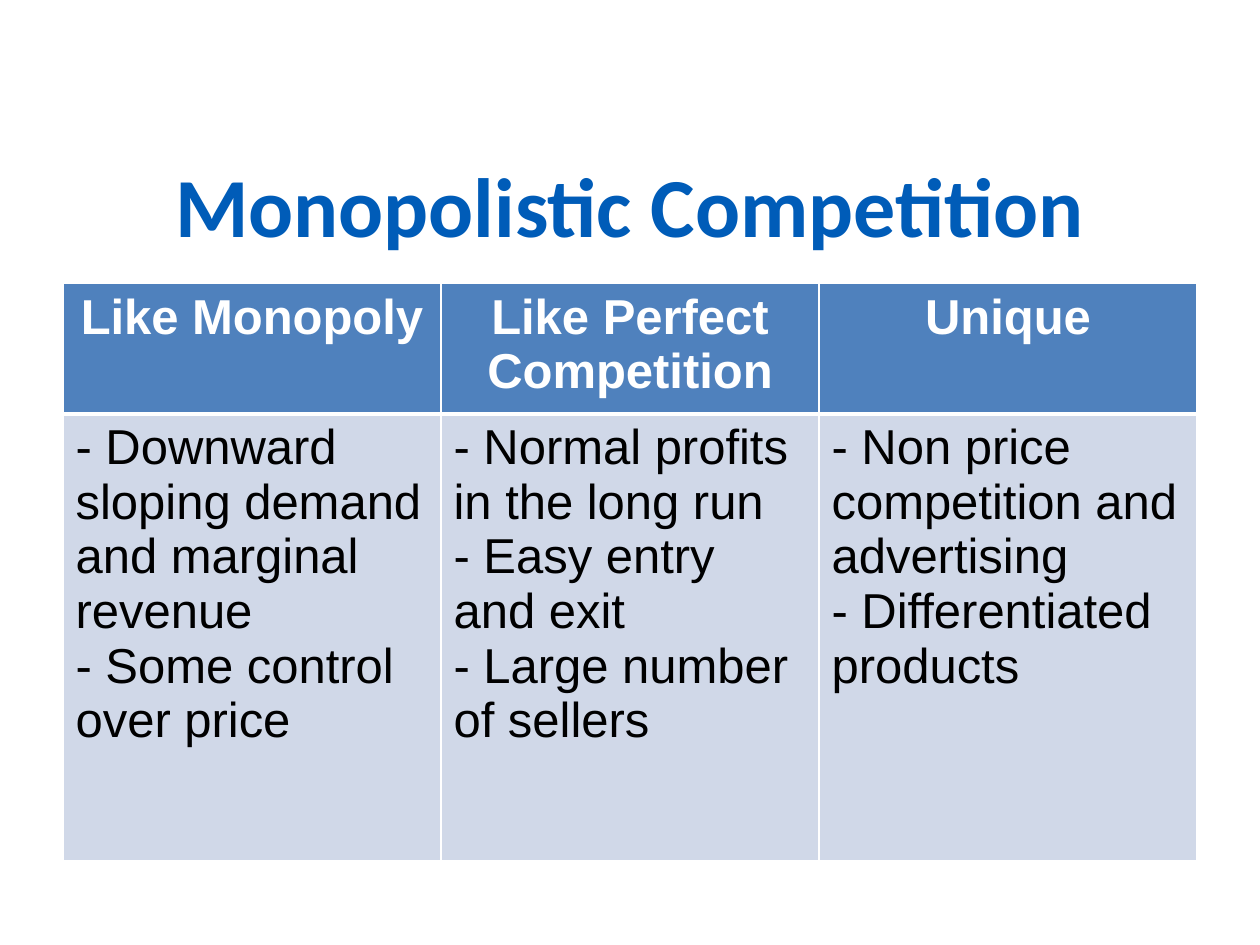
"""Build a slide comparing monopolistic competition with other market forms."""
from dataclasses import dataclass

import lxml.etree
import pptx
import pptx.dml.color
import pptx.enum.text
import pptx.oxml.ns
import pptx.slide
import pptx.table
import pptx.text.text
import pptx.util
from pptx.util import Cm

RGBColor = pptx.dml.color.RGBColor
Alignment = pptx.enum.text.PP_ALIGN
Anchor = pptx.enum.text.MSO_ANCHOR


@dataclass(frozen=True)
class TextStyle:
    font: str
    size: int
    color: str
    bold: bool
    alignment: Alignment


@dataclass(frozen=True)
class Theme:
    title: TextStyle = TextStyle("Calibri", 48, "005CB8", True, Alignment.CENTER)
    header: TextStyle = TextStyle("Arial", 28, "FFFFFF", True, Alignment.CENTER)
    body: TextStyle = TextStyle("Arial", 28, "000000", False, Alignment.LEFT)
    title_leading: int = 57
    header_fill: str = "4F81BD"
    body_fill: str = "D0D8E8"
    border: str = "FFFFFF"
    thin: int = 1
    thick: int = 3


@dataclass(frozen=True)
class Column:
    heading: str
    points: tuple[str, ...]


THEME = Theme()
LEFT, WIDTH = Cm(1.27), Cm(22.86)
TITLE_TOP, TITLE_HEIGHT = Cm(2.54), Cm(3.18)
TABLE_TOP = Cm(5.72)
ROW_HEIGHTS = (Cm(2.43), Cm(9))
COLUMNS = (
    Column("Like Monopoly", (
        "- Downward sloping demand and marginal revenue",
        "- Some control over price",
    )),
    Column("Like Perfect Competition", (
        "- Normal profits in the long run",
        "- Easy entry and exit",
        "- Large number of sellers",
    )),
    Column("Unique", (
        "- Non price competition and advertising",
        "- Differentiated products",
    )),
)


def write_paragraphs(frame: pptx.text.text.TextFrame, lines: tuple[str, ...], style: TextStyle) -> None:
    for index, line in enumerate(lines):
        paragraph = frame.add_paragraph() if index else frame.paragraphs[0]
        paragraph.alignment = style.alignment
        run = paragraph.add_run()
        run.text = line
        run.font.name = style.font
        run.font.size = pptx.util.Pt(style.size)
        run.font.bold = style.bold
        run.font.color.rgb = RGBColor.from_string(style.color)


def set_borders(cell: pptx.table._Cell, top: int, bottom: int) -> None:
    properties = cell._tc.get_or_add_tcPr()
    widths = {"lnL": THEME.thin, "lnR": THEME.thin, "lnT": top, "lnB": bottom}
    for index, (side, width) in enumerate(widths.items()):
        line = lxml.etree.Element(pptx.oxml.ns.qn(f"a:{side}"), w=str(pptx.util.Pt(width)))
        fill = lxml.etree.SubElement(line, pptx.oxml.ns.qn("a:solidFill"))
        lxml.etree.SubElement(fill, pptx.oxml.ns.qn("a:srgbClr"), val=THEME.border)
        properties.insert(index, line)


def fill_cell(cell: pptx.table._Cell, lines: tuple[str, ...], style: TextStyle,
              color: str, top: int, bottom: int) -> None:
    cell.fill.solid()
    cell.fill.fore_color.rgb = RGBColor.from_string(color)
    set_borders(cell, top, bottom)
    write_paragraphs(cell.text_frame, lines, style)


def add_title(slide: pptx.slide.Slide, text: str) -> None:
    frame = slide.shapes.add_textbox(LEFT, TITLE_TOP, WIDTH, TITLE_HEIGHT).text_frame
    frame.word_wrap = True
    frame.vertical_anchor = Anchor.MIDDLE
    write_paragraphs(frame, (text,), THEME.title)
    frame.paragraphs[0].line_spacing = pptx.util.Pt(THEME.title_leading)


def add_comparison(slide: pptx.slide.Slide, columns: tuple[Column, ...]) -> None:
    table = slide.shapes.add_table(
        len(ROW_HEIGHTS), len(columns), LEFT, TABLE_TOP, WIDTH, sum(ROW_HEIGHTS)
    ).table
    for row, height in zip(table.rows, ROW_HEIGHTS):
        row.height = height
    for index, column in enumerate(columns):
        fill_cell(table.cell(0, index), (column.heading,), THEME.header,
                  THEME.header_fill, THEME.thin, THEME.thick)
        fill_cell(table.cell(1, index), column.points, THEME.body,
                  THEME.body_fill, THEME.thick, THEME.thin)


def main() -> None:
    presentation = pptx.Presentation()
    presentation.slide_width, presentation.slide_height = Cm(25.4), Cm(19.05)
    slide = presentation.slides.add_slide(presentation.slide_layouts[6])
    add_title(slide, "Monopolistic Competition")
    add_comparison(slide, COLUMNS)
    presentation.save("out.pptx")


if __name__ == "__main__":
    main()
